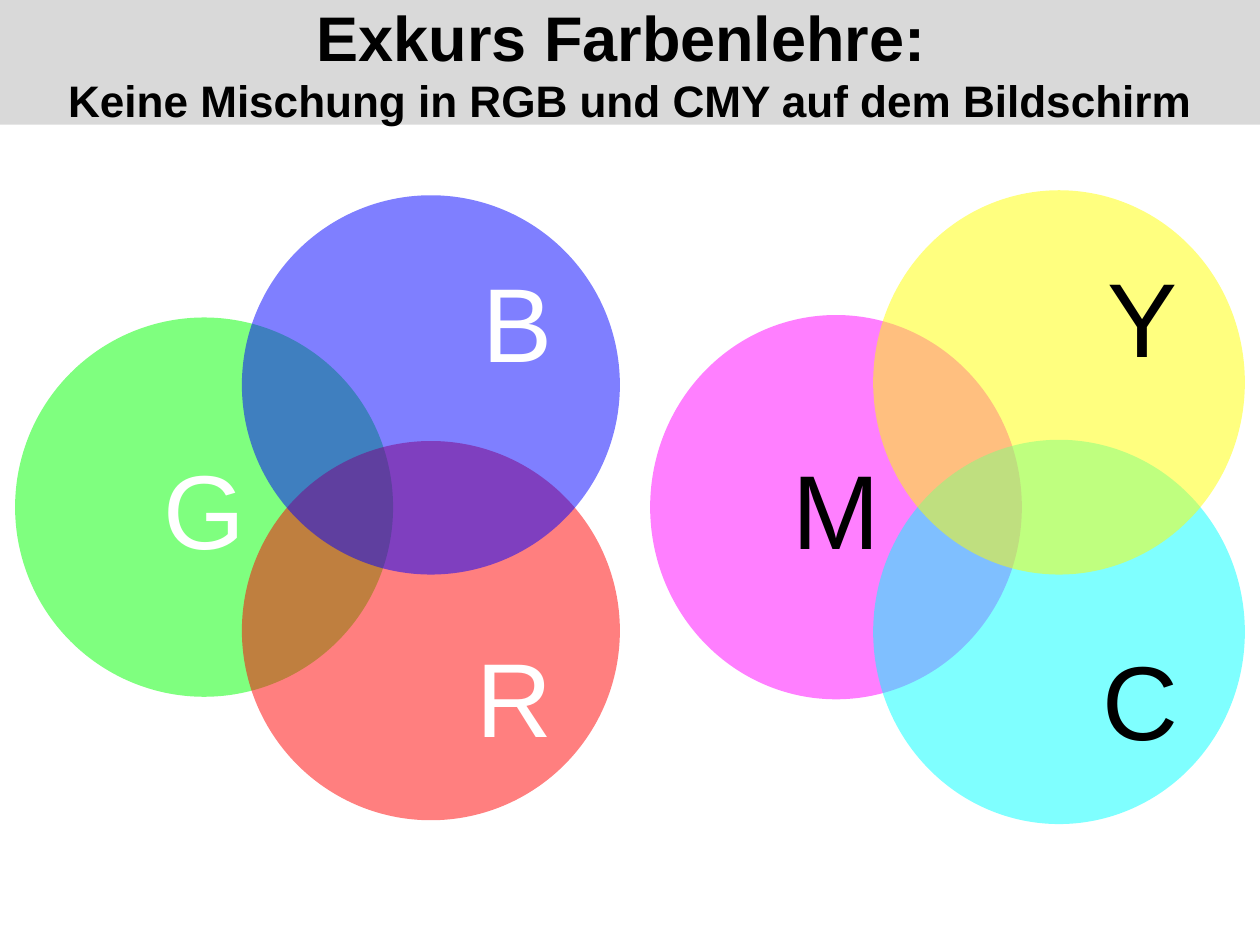
import pptx
import pptx.util
import pptx.dml.color
import pptx.enum.shapes
import pptx.enum.text
import pptx.oxml.ns
from lxml import etree

Inches, Pt = pptx.util.Inches, pptx.util.Pt
ALIGN = pptx.enum.text.PP_ALIGN
ANCHOR = pptx.enum.text.MSO_ANCHOR

COLORS = {
    "band": "D9D9D9", "black": "000000", "white": "FFFFFF",
    "green": "00FF00", "red": "FF0000", "blue": "0000FF",
    "magenta": "FF00FF", "cyan": "00FFFF", "yellow": "FFFF00",
}


def rgb(name):
    return pptx.dml.color.RGBColor.from_string(COLORS[name])


class ColorSlide:
    font = "Arial"
    letter_size = Pt(60)
    opacity = 50

    def __init__(self, prs):
        self.s = prs.slides.add_slide(prs.slide_layouts[5])

    def style(self, p, size, color, align, bold=False):
        p.alignment = align
        p.font.name = self.font
        p.font.size = size
        p.font.bold = bold
        p.font.color.rgb = rgb(color)

    def title(self, heading, subheading):
        sp = self.s.shapes.title
        sp.left, sp.top, sp.width, sp.height = 0, 0, Inches(10), Inches(0.99)
        sp.fill.solid()
        sp.fill.fore_color.rgb = rgb("band")
        tf = sp.text_frame
        tf.auto_size = pptx.enum.text.MSO_AUTO_SIZE.NONE
        tf.vertical_anchor = ANCHOR.MIDDLE
        p = tf.paragraphs[0]
        self.style(p, Pt(36), "black", ALIGN.CENTER, bold=True)
        p.add_run().text = heading
        p.add_line_break()
        r = p.add_run()
        r.text = subheading
        r.font.size = Pt(25.2)

    def circle(self, letter, box, fill, color, align, anchor):
        sp = self.s.shapes.add_shape(
            pptx.enum.shapes.MSO_SHAPE.OVAL, *(Inches(v) for v in box))
        sp.shadow.inherit = False
        sp.line.fill.background()
        sp.fill.solid()
        sp.fill.fore_color.rgb = rgb(fill)
        # Transparency
        qn = pptx.oxml.ns.qn
        clr = sp.fill._xPr.find(qn("a:solidFill")).find(qn("a:srgbClr"))
        etree.SubElement(clr, qn("a:alpha"), val=str(self.opacity * 1000))
        tf = sp.text_frame
        tf.vertical_anchor = anchor
        p = tf.paragraphs[0]
        p.text = letter
        self.style(p, self.letter_size, color, align)

    def color_model(self, left, right, tops, size, color, circles):
        """Three overlapping circles: one left, one lower right, one upper right."""
        places = [(left, ALIGN.CENTER, ANCHOR.MIDDLE),
                  (right, ALIGN.RIGHT, ANCHOR.BOTTOM),
                  (right, ALIGN.RIGHT, ANCHOR.TOP)]
        for (letter, fill), top, (x, align, anchor) in zip(circles, tops, places):
            self.circle(letter, (x, top, *size), fill, color, align, anchor)


def main():
    prs = pptx.Presentation()
    prs.slide_width, prs.slide_height = Inches(10), Inches(7.5)
    slide = ColorSlide(prs)

    # Title band
    slide.title("Exkurs Farbenlehre: ",
                "Keine Mischung in RGB und CMY auf dem Bildschirm")

    # Additive colours
    slide.color_model(0.12, 1.92, (2.52, 3.5, 1.55), (3, 3.01), "white",
                      [("G", "green"), ("R", "red"), ("B", "blue")])

    # Subtractive colours
    slide.color_model(5.16, 6.93, (2.5, 3.49, 1.51), (2.95, 3.05), "black",
                      [("M", "magenta"), ("C", "cyan"), ("Y", "yellow")])

    prs.save("out.pptx")


if __name__ == "__main__":
    main()
